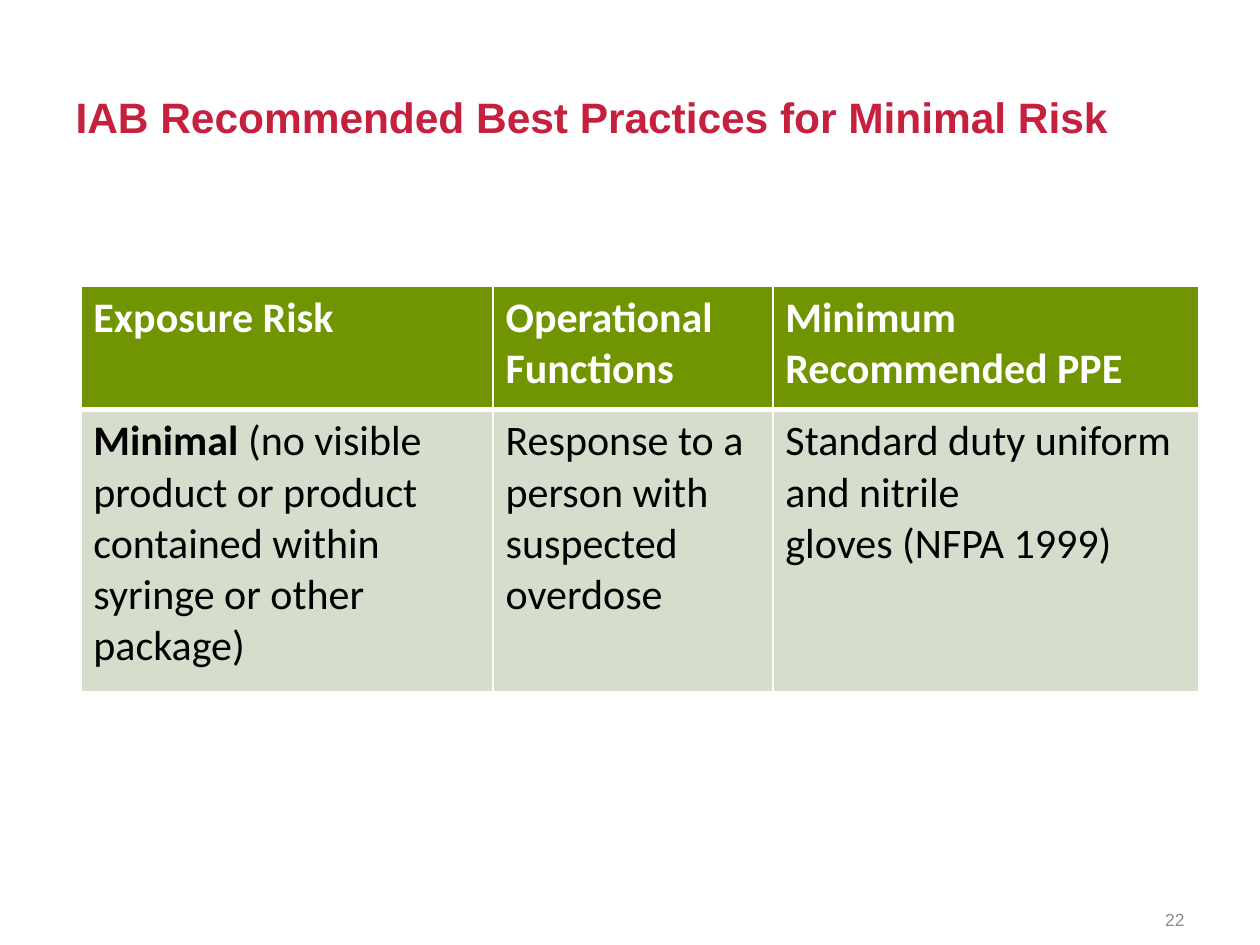
"""Build the slide on recommended protection for minimal exposure risk."""
from dataclasses import dataclass

from lxml.etree import SubElement
from pptx import Presentation
from pptx.dml.color import RGBColor as RGB
from pptx.enum.text import MSO_ANCHOR as ANCHOR, MSO_AUTO_SIZE as AUTOSIZE, PP_ALIGN as ALIGN
from pptx.oxml.ns import qn
from pptx.util import Cm, Pt


@dataclass(frozen=True)
class Theme:
    heading_font: str = "Arial"
    table_font: str = "Calibri"
    title_size: float = 24.3
    table_size: float = 24
    number_size: float = 10
    red: str = "C5203E"
    green: str = "719500"
    pale: str = "D5DDCC"
    white: str = "FFFFFF"
    ink: str = "000100"
    grey: str = "8C8C8C"


THEME = Theme()
COL_WIDTHS = (8.31, 5.64, 8.59)
ROW_HEIGHTS = (2.49, 5.69)
HEADERS = ("Exposure Risk", "Operational Functions", "Minimum Recommended PPE")
BODY = (
    (("Minimal", " (no visible product or product contained within syringe or other package)"),),
    (("Response to a person with",), ("suspected overdose",)),
    (("Standard duty uniform and nitrile",), ("gloves (NFPA 1999)",)),
)


def style_font(font, name, size, color, bold=False):
    font.name = name
    font.size = Pt(size)
    font.bold = bold
    font.color.rgb = RGB.from_string(color)


def place(sp, left, top, width, height):
    sp.left, sp.top, sp.width, sp.height = Cm(left), Cm(top), Cm(width), Cm(height)


def add_title(s, text):
    sp = s.shapes.title
    place(sp, 1.27, 1.7, 22.86, 1.5)
    tf = sp.text_frame
    tf.auto_size = AUTOSIZE.NONE
    tf.vertical_anchor = ANCHOR.MIDDLE
    p = tf.paragraphs[0]
    p.text = text
    p.alignment = ALIGN.LEFT
    p.line_spacing = 0.8
    style_font(p.font, THEME.heading_font, THEME.title_size, THEME.red, True)


def set_borders(cell, **widths):
    tc_pr = cell._tc.get_or_add_tcPr()
    for side in "LRTB":
        ln = SubElement(tc_pr, qn(f"a:ln{side}"), w=str(Pt(widths.get(side, 1))))
        fill = SubElement(ln, qn("a:solidFill"))
        SubElement(fill, qn("a:srgbClr"), val=THEME.white)


def fill_cell(cell, paragraphs, fill, color, bold):
    cell.fill.solid()
    cell.fill.fore_color.rgb = RGB.from_string(fill)
    tf = cell.text_frame
    for i, runs in enumerate(paragraphs):
        p = tf.add_paragraph() if i else tf.paragraphs[0]
        for text in runs:
            r = p.add_run()
            r.text = text
            r.font.bold = bold or (len(runs) > 1 and text == runs[0])
        style_font(p.font, THEME.table_font, THEME.table_size, color, bold)


def add_risk_table(s):
    frame = s.shapes.add_table(len(ROW_HEIGHTS), len(COL_WIDTHS), Cm(1.63), Cm(5.77),
                               Cm(sum(COL_WIDTHS)), Cm(sum(ROW_HEIGHTS)))
    table = frame.table
    for row, height in zip(table.rows, ROW_HEIGHTS):
        row.height = Cm(height)
    for i, width in enumerate(COL_WIDTHS):
        table.columns[i].width = Cm(width)
        head, body = table.cell(0, i), table.cell(1, i)
        set_borders(head, B=3)
        set_borders(body, T=3)
        fill_cell(head, ((HEADERS[i],),), THEME.green, THEME.white, True)
        fill_cell(body, BODY[i], THEME.pale, THEME.ink, False)


def add_slide_number(s, text):
    sp = s.shapes.add_textbox(Cm(18.21), Cm(18.03), Cm(5.92), Cm(1.02))
    tf = sp.text_frame
    tf.word_wrap = True
    tf.vertical_anchor = ANCHOR.MIDDLE
    p = tf.paragraphs[0]
    p.text = text
    p.alignment = ALIGN.RIGHT
    style_font(p.font, THEME.heading_font, THEME.number_size, THEME.grey)


def main():
    prs = Presentation()
    prs.slide_width, prs.slide_height = Cm(25.4), Cm(19.05)
    s = prs.slides.add_slide(prs.slide_layouts.get_by_name("Title Only"))
    add_title(s, "IAB Recommended Best Practices for Minimal Risk")
    add_risk_table(s)
    add_slide_number(s, "22")
    prs.save("out.pptx")


if __name__ == "__main__":
    main()
